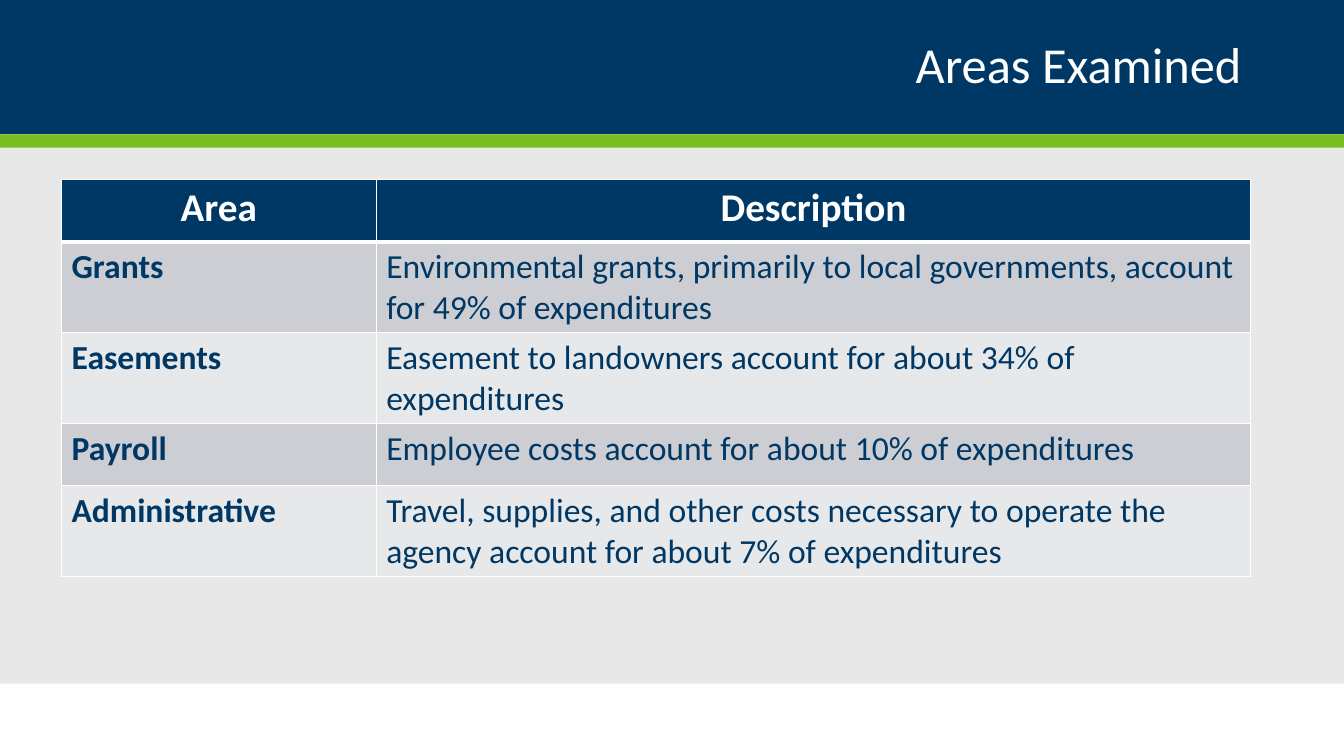
from lxml.etree import SubElement
from pptx import Presentation
from pptx.dml.color import RGBColor
from pptx.enum.shapes import MSO_SHAPE
from pptx.enum.text import MSO_ANCHOR, PP_ALIGN
from pptx.oxml.ns import qn
from pptx.util import Cm, Pt

TITLE = "Areas Examined"
ROWS = [
    ("Area", "Description"),
    ("Grants", "Environmental grants, primarily to local governments, account for 49% of expenditures"),
    ("Easements", "Easement to landowners account for about 34% of expenditures"),
    ("Payroll", "Employee costs account for about 10% of expenditures"),
    ("Administrative", "Travel, supplies, and other costs necessary to operate the agency account for about 7% of expenditures"),
]
COLORS = {
    "navy": "003865",
    "green": "78BE21",
    "panel": "E8E8E8",
    "white": "FFFFFF",
    "odd": "CCCED3",
    "even": "E7E8EA",
}
WIDTH, HEIGHT = 33.87, 19.05
BANDS = [
    ("navy", 0, 3.39),
    ("panel", 3.39, 13.84),
    ("green", 3.39, 0.33),
]
COL_WIDTHS = (7.93, 22.04)
ROW_HEIGHT = 1.57


def rgb(name):
    return RGBColor.from_string(COLORS[name])


def write(tf, text, align, size, color, bold=False):
    p = tf.paragraphs[0]
    p.alignment = align
    r = p.add_run()
    r.text = text
    for key, value in {"name": "Calibri", "size": Pt(size), "bold": bold}.items():
        setattr(r.font, key, value)
    r.font.color.rgb = rgb(color)
    return p


def add_borders(cell, bottom, top):
    tc_pr = cell._tc.get_or_add_tcPr()
    for side, width in {"L": 1, "R": 1, "T": top, "B": bottom}.items():
        ln = SubElement(tc_pr, qn(f"a:ln{side}"), w=str(Pt(width)))
        fill = SubElement(ln, qn("a:solidFill"))
        SubElement(fill, qn("a:srgbClr"), val=COLORS["white"])


def add_bands(s):
    for color, top, height in BANDS:
        sp = s.shapes.add_shape(MSO_SHAPE.RECTANGLE, 0, Cm(top), Cm(WIDTH), Cm(height))
        sp.shadow.inherit = False
        sp.fill.solid()
        sp.fill.fore_color.rgb = rgb(color)
        sp.line.fill.background()


def add_title(s):
    tf = s.shapes.add_textbox(Cm(2.33), Cm(0.43), Cm(29.21), Cm(2.54)).text_frame
    for key, value in {"word_wrap": True, "vertical_anchor": MSO_ANCHOR.MIDDLE}.items():
        setattr(tf, key, value)
    write(tf, TITLE, PP_ALIGN.RIGHT, 36, "white").line_spacing = 0.9


def add_areas(s):
    table = s.shapes.add_table(
        len(ROWS), len(COL_WIDTHS), Cm(1.55), Cm(4.52),
        Cm(sum(COL_WIDTHS)), Cm(ROW_HEIGHT * len(ROWS)),
    ).table
    for col, width in zip(table.columns, COL_WIDTHS):
        col.width = Cm(width)
    for i, row in enumerate(ROWS):
        table.rows[i].height = Cm(ROW_HEIGHT)
        for j, text in enumerate(row):
            cell = table.cell(i, j)
            add_borders(cell, bottom=3 if i == 0 else 1, top=3 if i == 1 else 1)
            cell.fill.solid()
            if i == 0:
                cell.fill.fore_color.rgb = rgb("navy")
                write(cell.text_frame, text, PP_ALIGN.CENTER, 28, "white", True)
            else:
                cell.fill.fore_color.rgb = rgb("odd" if i % 2 else "even")
                write(cell.text_frame, text, PP_ALIGN.LEFT, 24, "navy", j == 0)


def main():
    prs = Presentation()
    prs.slide_width, prs.slide_height = Cm(WIDTH), Cm(HEIGHT)
    s = prs.slides.add_slide(prs.slide_layouts[6])
    add_bands(s)
    add_title(s)
    add_areas(s)
    prs.save("out.pptx")


if __name__ == "__main__":
    main()
